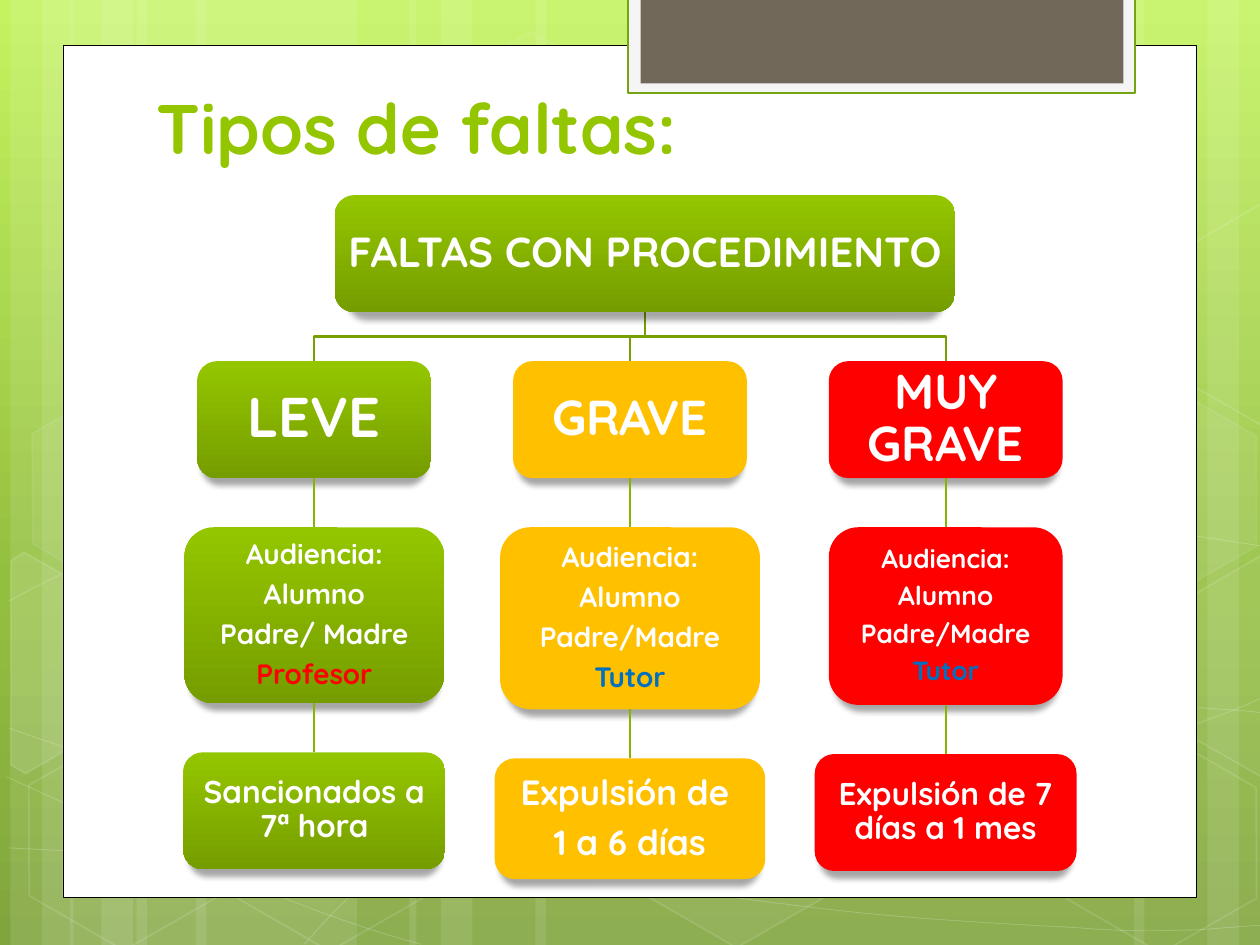
import math
from dataclasses import dataclass

from lxml import etree
from pptx import Presentation
from pptx import util as u
from pptx.dml import color
from pptx.enum import shapes, text
from pptx.oxml import ns


@dataclass(frozen=True)
class Theme:
    """Colours and type of the deck."""
    font: str = "Quicksand"
    title: int = 40
    heading: int = 24
    white: str = "FFFFFF"
    black: str = "000000"
    green: str = "94C600"
    panel: str = "F5F5F5"
    panel_line: str = "74A510"
    taupe: str = "71685A"
    branch: str = "779F00"
    twig: str = "86B400"
    amber: str = "FFC000"
    red: str = "FF0000"
    blue: str = "0070C0"
    backdrop: tuple = ((0, "C3F35F"), (62, "93BF3F"), (100, "81A53E"))
    leaf: tuple = ((0, "94C600"), (100, "769D00"))


@dataclass(frozen=True)
class Card:
    """Size and wording of one card in the tree."""
    width: float
    height: float
    size: int
    lines: tuple
    accent: str = None
    margin: float = 1


THEME = Theme()
KIND = shapes.MSO_SHAPE
GAP = 28.1
COLUMNS = (
    (THEME.leaf, (Card(133.6, 66.8, 32, ("LEVE",), margin=1.5),
                  Card(148.5, 100.5, 16, ("Audiencia:", "Alumno", "Padre/ Madre", "Profesor"), THEME.red),
                  Card(149.6, 66.8, 18, ("Sancionados a 7ª hora",)))),
    (THEME.amber, (Card(133.6, 66.8, 28, ("GRAVE",), margin=1.5),
                   Card(148.5, 104, 16, ("Audiencia:", "Alumno", "Padre/Madre", "Tutor"), THEME.blue),
                   Card(154.6, 69, 20, ("Expulsión de ", "1 a 6 días")))),
    (THEME.red, (Card(133.6, 66.8, 28, ("MUY GRAVE",), margin=1.5),
                 Card(133.6, 101.5, 15, ("Audiencia:", "Alumno", "Padre/Madre", "Tutor"), THEME.blue),
                 Card(149.6, 66.8, 18, ("Expulsión de 7 días a 1 mes",)))),
)
STRIPES = ((78, 126), (6, 36), (24, 60), (112, 126), (40, 36), (58, 60),
           (528, 126), (690, 36), (648, 60), (306, 222), (234, 36), (252, 60))
CURVES = (
    ((5, 484.5), (44, 486.5), (83, 489), (137, 488), (191, 487.5), (258, 486), (330, 479),
     (402, 471.5), (504, 458), (570, 444), (636, 430.5), (703.5, 409), (725, 396.5)),
    ((5, 343.5), (26, 332), (47, 321), (87, 310.5), (128, 298.5), (186.5, 283.5), (250, 278.5),
     (314, 273.5), (391.5, 273), (471, 278.5), (550, 284.5), (682, 306.5), (725, 312.5)),
    ((4, 444), (91.5, 484), (178, 523.5), (240.5, 539.5)),
    ((5, 416), (27.5, 424), (50.5, 432), (92, 443.5), (134, 454.5), (196.5, 472.5), (257, 484.5),
     (317, 497), (392.5, 510), (452, 517), (512, 525), (576, 528), (614, 530),
     (651.5, 533), (661.5, 531.5), (680.5, 531.5), (699, 530.5), (712, 529), (725, 528.5)),
    ((174, 539.5), (187, 525), (200, 510.5), (217.5, 497.5), (235, 484.5), (259, 470), (279.5, 460),
     (299.5, 450), (312, 445.5), (338.5, 438.5), (364.5, 431.5), (412.5, 421), (438, 416),
     (463.5, 411), (467.5, 411), (489.5, 409.5), (512, 407.5), (547, 405.5), (571.5, 404.5),
     (597, 404), (638, 404.5), (638, 404.5), (654, 404.5), (670, 404.5), (686, 404.5),
     (699, 405.5), (711.5, 406), (718, 407), (724.5, 407.5), (722, 407), (724.5, 407.5)),
)
HEXAGONS = ((240.5, 26, 4, 8), (358, 424, 6, 12), (8, 425.5, 0, 12), (10, 224.5, 7, 8),
            (125.5, 426, 0, 12), (542, 326, 10, 12), (600.5, 427, 0, 12), (600.5, 226, 7, 8))
LEFT = ((6, 320.5), (13.5, 315.5), (69, 347), (68.5, 410.5), (14.5, 442), (6, 437))
RIGHT = ((666.5, 349), (720.5, 317.5), (726.5, 321), (726.5, 441.5), (721.5, 444), (666.5, 412.5))
UPPER = tuple((x, y - 201) for x, y in RIGHT)
PARTS = ((LEFT, (26, 385), 10), (RIGHT, (709, 374.5), 4), (UPPER, (709, 173.5), 0))


def add_alpha(node, percent):
    """Make the colours below a node partly transparent."""
    for tone in node.iter(ns.qn("a:srgbClr")):
        etree.SubElement(tone, ns.qn("a:alpha"), val=str(percent * 1000))

def set_gradient(fill, owner, stops):
    """Give a fill a downward gradient."""
    fill.gradient()
    node = owner.find(".//" + ns.qn("a:gradFill"))
    stop_list = node.find(ns.qn("a:gsLst"))
    stop_list.clear()
    for position, tone in stops:
        stop = etree.SubElement(stop_list, ns.qn("a:gs"), pos=str(position * 1000))
        etree.SubElement(stop, ns.qn("a:srgbClr"), val=tone)
    node.find(ns.qn("a:lin")).set("ang", "5400000")

def paint(shape, fill=None, line=None, width=1, fill_alpha=100, line_alpha=100):
    """Set fill, line and transparency, and drop the shadow."""
    shape.shadow.inherit = False
    if isinstance(fill, tuple):
        set_gradient(shape.fill, shape._element, fill)
    elif fill and fill_alpha:
        shape.fill.solid()
        shape.fill.fore_color.rgb = color.RGBColor.from_string(fill)
        add_alpha(shape._element.spPr.find(ns.qn("a:solidFill")), fill_alpha)
    else:
        shape.fill.background()
    if line:
        shape.line.color.rgb = color.RGBColor.from_string(line)
        shape.line.width = u.Pt(width)
        add_alpha(shape._element.spPr.find(ns.qn("a:ln")), line_alpha)
    else:
        shape.line.fill.background()

def add_block(page, kind, *box):
    """Add a preset shape that fills a box."""
    return page.shapes.add_shape(kind, *map(u.Pt, box))

def add_outline(page, origin, points, close=False):
    """Add an outline from points relative to an origin."""
    places = [(u.Pt(origin[0] + x), u.Pt(origin[1] + y)) for x, y in points]
    builder = page.shapes.build_freeform(*places[0])
    builder.add_line_segments(places[1:], close=close)
    return builder.convert_to_shape()

def add_curve(page, origin, points):
    """Add a chain of cubic curves through every third point."""
    shape = add_outline(page, origin, points)
    track = shape._element.find(".//" + ns.qn("a:path"))
    segments = track.findall(ns.qn("a:lnTo"))
    for start in range(0, len(segments), 3):
        curve = etree.SubElement(track, ns.qn("a:cubicBezTo"))
        for segment in segments[start:start + 3]:
            curve.append(segment[0])
            track.remove(segment)
    return shape

def add_twig(page, x, top, half=3.6):
    """Add the upright line between two stacked cards."""
    twig = add_outline(page, (x, top), ((0, 0), (0, GAP)))
    twig.left, twig.width = u.Pt(x - half), u.Pt(2 * half)
    track = twig._element.find(".//" + ns.qn("a:path"))
    track.set("w", str(u.Pt(2 * half)))
    for point in track.iter(ns.qn("a:pt")):
        point.set("x", str(u.Pt(half)))
    paint(twig, None, THEME.twig, 1.25)

def turn_back(points, centre, angle=math.radians(-30)):
    """Turn points about a centre."""
    cos, sin = math.cos(angle), math.sin(angle)
    return [(centre[0] + (x - centre[0]) * cos - (y - centre[1]) * sin,
             centre[1] + (x - centre[0]) * sin + (y - centre[1]) * cos) for x, y in points]

def style(para, size, tone):
    """Format the runs of a paragraph."""
    for span in para.runs:
        span.font.name, span.font.size, span.font.bold = THEME.font, u.Pt(size), True
        span.font.color.rgb = color.RGBColor.from_string(tone)

def draw_backdrop(page, left, top, height):
    """Draw the gradient, stripes, curves and hexagons."""
    set_gradient(page.background.fill, page._element, THEME.backdrop)
    for x, width in STRIPES:
        paint(add_block(page, KIND.RECTANGLE, left + x, top, width, height), THEME.white, fill_alpha=10)
    for curve in CURVES:
        paint(add_curve(page, (left, top), curve), None, THEME.white, 0.5, line_alpha=20)
    for x, y, fill_alpha, line_alpha in HEXAGONS:
        hexagon = add_block(page, KIND.HEXAGON, left + x, top + y, 126, 109.5)
        hexagon.adjustments[0], hexagon.adjustments[1], hexagon.rotation = 0.29, 1.15, 30
        paint(hexagon, THEME.white, THEME.white, 1, fill_alpha, line_alpha)
    for points, centre, fill_alpha in PARTS:
        part = add_outline(page, (left, top), turn_back(points, centre), close=True)
        part.rotation = 30
        paint(part, THEME.white, THEME.white, 1, fill_alpha, 12)

def draw_sheet(page, left, top, width, height):
    """Draw the white sheet and the tab at its top edge."""
    paint(add_block(page, KIND.RECTANGLE, left, top, width, height), THEME.white, THEME.black, 0.5)
    paint(add_block(page, KIND.RECTANGLE, left + 323, top - 27.4, 289.6, 54.7),
          THEME.panel, THEME.panel_line, 1.25)
    paint(add_block(page, KIND.RECTANGLE, left + 330, top - 27.4, 276, 49), THEME.taupe)

def draw_title(page, *box):
    """Write the slide title."""
    frame = page.shapes.add_textbox(*map(u.Pt, box)).text_frame
    frame.word_wrap, frame.vertical_anchor = True, text.MSO_ANCHOR.BOTTOM
    frame.text = "Tipos de faltas:"
    style(frame.paragraphs[0], THEME.title, THEME.green)

def draw_card(page, card, centre, top, fill, kind=KIND.ROUNDED_RECTANGLE):
    """Draw one shadowed card with its lines of text."""
    shape = add_block(page, kind, centre - card.width / 2, top, card.width, card.height)
    paint(shape, fill)
    shadow = etree.SubElement(shape._element.spPr.find(ns.qn("a:effectLst")), ns.qn("a:outerShdw"),
                              blurRad="44450", dist="50800", dir="5400000", sx="96000", rotWithShape="0")
    etree.SubElement(shadow, ns.qn("a:srgbClr"), val=THEME.black)
    add_alpha(shadow, 34)
    frame = shape.text_frame
    frame.word_wrap, frame.vertical_anchor = True, text.MSO_ANCHOR.MIDDLE
    frame.margin_left = frame.margin_right = frame.margin_top = frame.margin_bottom = u.Pt(card.margin)
    frame.text = "\n".join(card.lines)
    for para in frame.paragraphs:
        para.alignment, para.line_spacing = text.PP_ALIGN.CENTER, 0.9
        para.space_after = u.Pt(round(card.size * 0.35, 1))
        style(para, card.size, THEME.white)
    if card.accent:
        style(frame.paragraphs[-1], card.size, card.accent)

def draw_tree(page, left, top, pitch):
    """Draw the root card and one column for each kind of fault."""
    root = Card(354.5, 66.8, THEME.heading, ("FALTAS CON PROCEDIMIENTO",), margin=1.5)
    stem, middle, end = 264, root.height + GAP / 2, root.height + GAP
    for index, (fill, cards) in enumerate(COLUMNS):
        centre, level = 75 + index * pitch, top + end
        bend = ((stem, root.height), (stem, middle), (centre, middle), (centre, end))
        paint(add_outline(page, (left, top), bend), None, THEME.branch, 1.25)
        for row, card in enumerate(cards):
            if row:
                add_twig(page, left + centre, level - GAP)
            draw_card(page, card, left + centre, level, fill)
            level += card.height + GAP
    draw_card(page, root, left + stem, top, THEME.leaf, KIND.FLOWCHART_ALTERNATE_PROCESS)

def main():
    """Build the deck and save it."""
    deck = Presentation()
    deck.slide_width, deck.slide_height = u.Pt(720), u.Pt(540)
    page = deck.slides.add_slide(deck.slide_layouts[6])
    draw_backdrop(page, 0, 0, 540)
    draw_sheet(page, 36, 26, 648, 487)
    draw_title(page, 82.4, 43, 553, 57)
    draw_tree(page, 104.6, 111.5, 180.4)
    deck.save("out.pptx")


if __name__ == "__main__":
    main()
